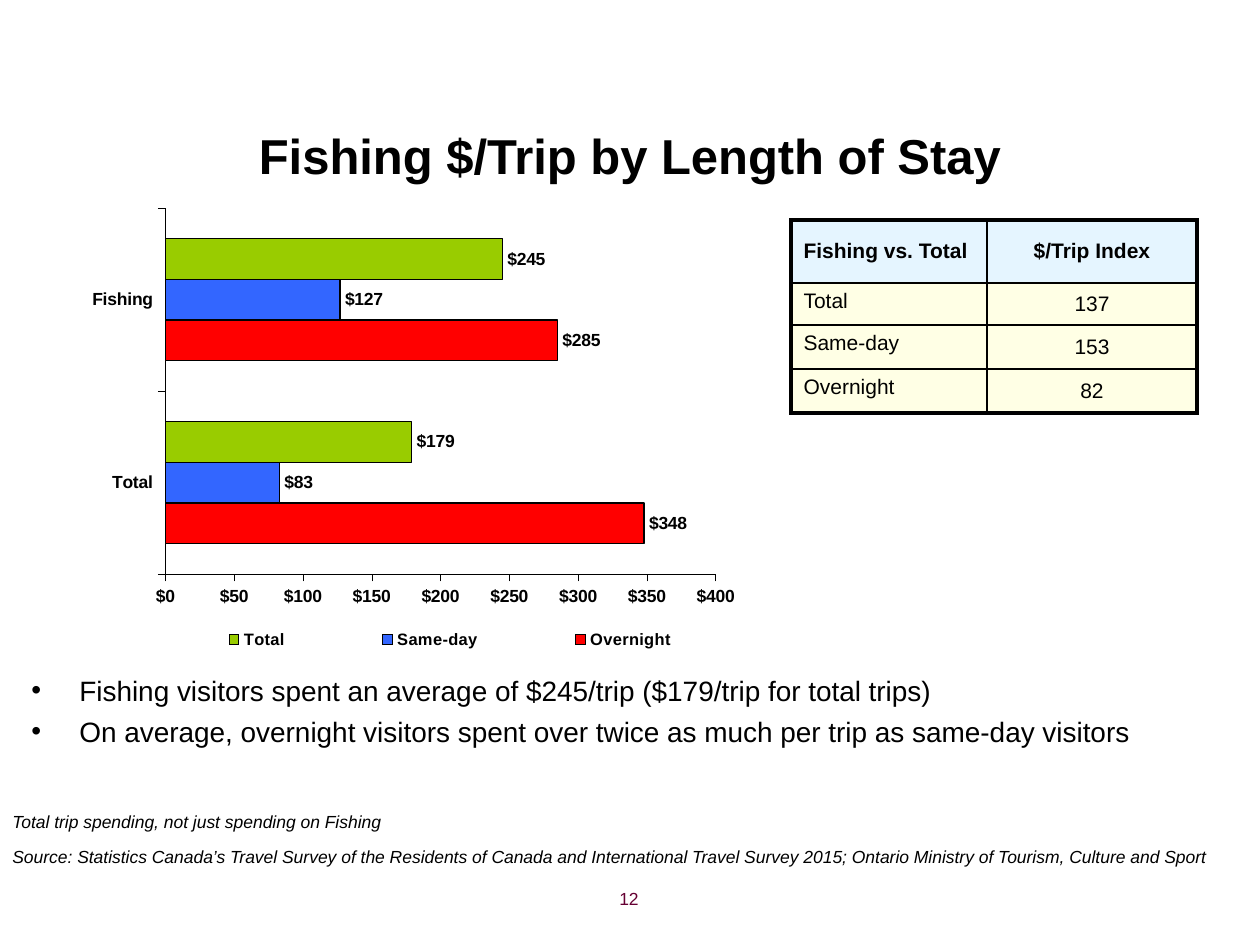
from lxml import etree
from pptx import Presentation
from pptx.chart.data import CategoryChartData
from pptx.dml.color import RGBColor
from pptx.enum.chart import XL_CHART_TYPE, XL_LABEL_POSITION, XL_LEGEND_POSITION, XL_TICK_MARK
from pptx.enum.text import MSO_ANCHOR, PP_ALIGN
from pptx.oxml import parse_xml
from pptx.oxml.ns import nsdecls, qn
from pptx.util import Pt

SCALE = 914400 / 126
FONT = "Arial"
LEFT, CENTER, RIGHT = PP_ALIGN.LEFT, PP_ALIGN.CENTER, PP_ALIGN.RIGHT
TOP, MIDDLE = MSO_ANCHOR.TOP, MSO_ANCHOR.MIDDLE
BAR, OUTSIDE_END = XL_CHART_TYPE.BAR_CLUSTERED, XL_LABEL_POSITION.OUTSIDE_END
LEGEND_BOTTOM, TICK_OUT = XL_LEGEND_POSITION.BOTTOM, XL_TICK_MARK.OUTSIDE
DOLLARS = r"\$#,##0"
COLORS = {
    "black": "000000", "page_number": "660033", "header": "CCECFF", "body": "FFFFCC",
    "Overnight": "FF0000", "Same-day": "3366FF", "Total": "99CC00",
}
SPENDING = {"Overnight": (348, 285), "Same-day": (83, 127), "Total": (179, 245)}
INDEX_ROWS = [("Fishing vs. Total", "$/Trip Index"), ("Total", "137"),
              ("Same-day", "153"), ("Overnight", "82")]
COLUMN_WIDTHS = (196, 210)
ROW_HEIGHTS = (63, 42, 44, 44)
BULLETS = [
    "Fishing visitors spent an average of $245/trip ($179/trip for total trips)",
    "On average, overnight visitors spent over twice as much per trip as same-day visitors",
]
NOTES = [
    (805, "Total trip spending, not just spending on Fishing"),
    (840, "Source: Statistics Canada’s Travel Survey of the Residents of Canada and "
          "International Travel Survey 2015; Ontario Ministry of Tourism, Culture and Sport"),
]


def px(length):
    return round(length * SCALE)


def rgb(name):
    return RGBColor.from_string(COLORS[name])


def format_font(font, size, color="black", bold=False, italic=False):
    font.name = FONT
    font.size = Pt(size)
    font.bold = bold
    font.italic = italic
    font.color.rgb = rgb(color)


def write(para, text, align=LEFT, **style):
    para.alignment = align
    span = para.add_run()
    span.text = text
    format_font(span.font, **style)


def add_box(page, left, top, width, height):
    box = page.shapes.add_textbox(px(left), px(top), px(width), px(height))
    box.text_frame.word_wrap = True
    return box.text_frame


def add_title(page, text):
    title = page.shapes.title
    title.left, title.top, title.width, title.height = map(px, (63, 108, 1134, 94))
    title.text_frame.vertical_anchor = MIDDLE
    write(title.text_frame.paragraphs[0], text, CENTER, size=28, bold=True)


def add_bullets(page):
    frame = add_box(page, 19, 674, 1197, 199)
    for number, text in enumerate(BULLETS):
        para = frame.add_paragraph() if number else frame.paragraphs[0]
        para.line_spacing = 0.8
        if number:
            para.space_before = Pt(8)
        properties = para._p.get_or_add_pPr()
        properties.set("marL", str(px(48)))
        properties.set("indent", str(-px(48)))
        etree.SubElement(properties, qn("a:buFont")).set("typeface", FONT)
        etree.SubElement(properties, qn("a:buChar")).set("char", "•")
        write(para, text, size=16)


def set_borders(cell, widths):
    properties = cell._tc.get_or_add_tcPr()
    for position, (side, width) in enumerate(widths.items()):
        properties.insert(position, parse_xml(
            f'<a:ln{side} {nsdecls("a")} w="{Pt(width)}"><a:solidFill>'
            f'<a:srgbClr val="{COLORS["black"]}"/></a:solidFill></a:ln{side}>'))


def fill_half(cell, color):
    cell.fill.solid()
    cell.fill.fore_color.rgb = rgb(color)
    shade = cell._tc.tcPr.find(".//" + qn("a:srgbClr"))
    etree.SubElement(shade, qn("a:alpha")).set("val", "50000")


def add_index_table(page):
    row_count, column_count = len(INDEX_ROWS), len(COLUMN_WIDTHS)
    table = page.shapes.add_table(
        row_count, column_count, px(791), px(220),
        px(sum(COLUMN_WIDTHS)), px(sum(ROW_HEIGHTS))).table
    table.horz_banding = False
    for column, width in zip(table.columns, COLUMN_WIDTHS):
        column.width = px(width)
    for r, (row, height, texts) in enumerate(zip(table.rows, ROW_HEIGHTS, INDEX_ROWS)):
        row.height = px(height)
        for c, (cell, text) in enumerate(zip(row.cells, texts)):
            header = r == 0
            cell.vertical_anchor = MIDDLE if header or c else TOP
            if c and not header:
                cell.margin_left = cell.margin_right = 0
                cell.margin_top = cell.margin_bottom = 0
            write(cell.text_frame.paragraphs[0], text, CENTER if c else LEFT,
                  size=12, bold=header)
            fill_half(cell, "header" if header else "body")
            edges = {"L": c == 0, "R": c == column_count - 1,
                     "T": r == 0, "B": r == row_count - 1}
            set_borders(cell, {side: 2.25 if outer else 1 for side, outer in edges.items()})


def set_layout(element, x, y, width, height, inner=False):
    for old in element.findall(qn("c:layout")):
        element.remove(old)
    target = '<c:layoutTarget val="inner"/>' if inner else ""
    layout = parse_xml(
        f'<c:layout {nsdecls("c")}><c:manualLayout>{target}'
        f'<c:xMode val="edge"/><c:yMode val="edge"/><c:x val="{x}"/><c:y val="{y}"/>'
        f'<c:w val="{width}"/><c:h val="{height}"/></c:manualLayout></c:layout>')
    element.insert(0 if inner else 1, layout)


def format_axis(axis):
    axis.has_major_gridlines = False
    axis.major_tick_mark = TICK_OUT
    axis.format.line.color.rgb = rgb("black")
    axis.format.line.width = Pt(0.18)
    format_font(axis.tick_labels.font, 10, bold=True)


def format_series(series):
    series.invert_if_negative = False
    series.format.fill.solid()
    series.format.fill.fore_color.rgb = rgb(series.name)
    series.format.line.color.rgb = rgb("black")
    series.format.line.width = Pt(0.73)
    labels = series.data_labels
    labels.show_value = True
    labels.position = OUTSIDE_END
    labels.number_format = DOLLARS
    labels.number_format_is_linked = False
    format_font(labels.font, 10, bold=True)


def add_spending_chart(page):
    data = CategoryChartData(number_format=DOLLARS)
    data.categories = ["Total", "Fishing"]
    for name, values in SPENDING.items():
        data.add_series(name, values)
    chart = page.shapes.add_chart(BAR, px(4), px(199), px(949), px(469), data).chart
    chart.has_title = False
    format_font(chart.font, 10, bold=True)
    plot = chart.plots[0]
    plot.gap_width = 150
    plot.vary_by_categories = False
    for series in plot.series:
        format_series(series)
    for axis in (chart.category_axis, chart.value_axis):
        format_axis(axis)
    chart.value_axis.minimum_scale = 0
    chart.value_axis.maximum_scale = 400
    chart.value_axis.major_unit = 50
    chart.value_axis.tick_labels.number_format = DOLLARS
    chart.value_axis.tick_labels.number_format_is_linked = False
    chart.has_legend = True
    chart.legend.position = LEGEND_BOTTOM
    chart.legend.include_in_layout = False
    format_font(chart.legend.font, 9.4, bold=True)
    set_layout(chart.legend._element, 0.14, 0.91, 0.66, 0.06)
    set_layout(chart._chartSpace.chart.plotArea, 0.17, 0.02, 0.58, 0.78, inner=True)


def main():
    deck = Presentation()
    deck.slide_width, deck.slide_height = px(1260), px(945)
    page = deck.slides.add_slide(deck.slide_layouts[5])
    add_title(page, "Fishing $/Trip by Length of Stay")
    add_bullets(page)
    add_index_table(page)
    number = add_box(page, 357, 882, 294, 44)
    write(number.paragraphs[0], "12", RIGHT, size=10, color="page_number")
    add_spending_chart(page)
    for top, text in NOTES:
        note = add_box(page, 0, top, 1235, 34)
        write(note.paragraphs[0], text, size=10, italic=True)
    deck.save("out.pptx")


if __name__ == "__main__":
    main()
